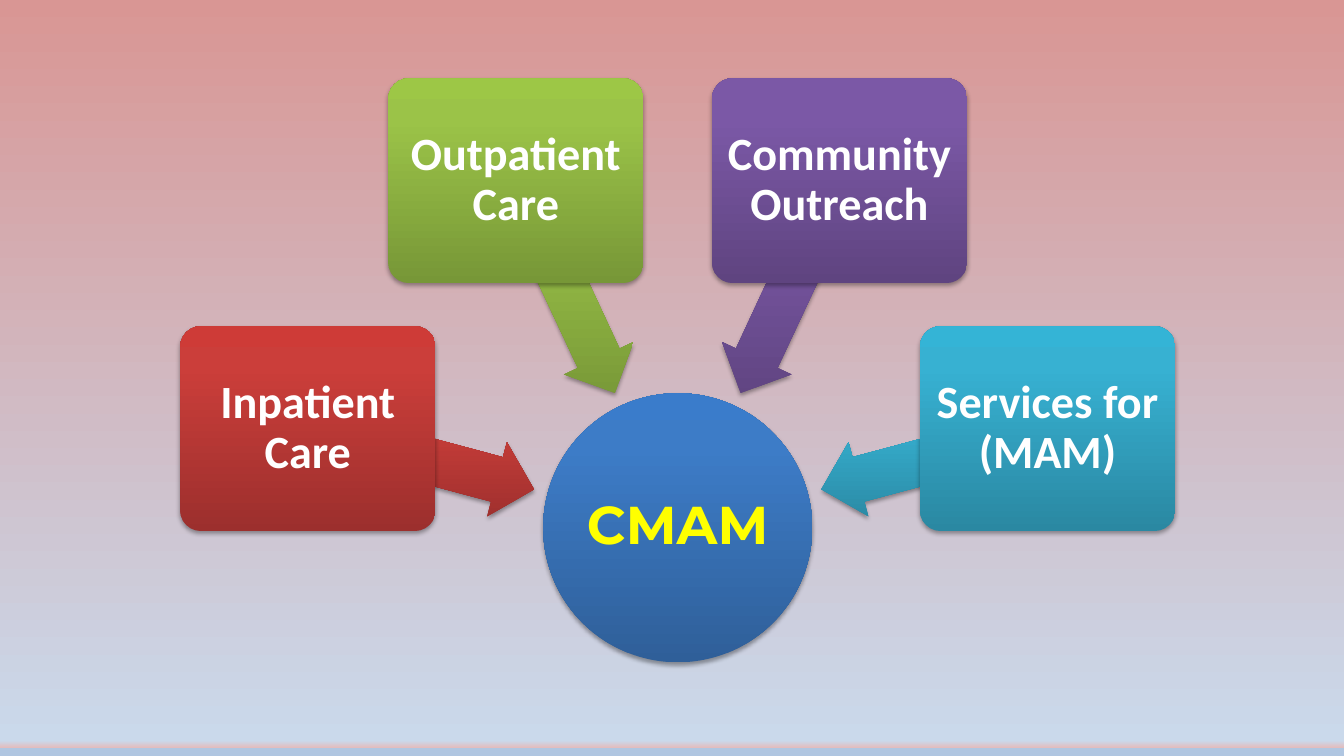
import math
from dataclasses import dataclass

from lxml import etree
from pptx import Presentation
from pptx import util as u
from pptx.dml.color import RGBColor
from pptx.enum import shapes, text
from pptx.oxml import ns
from pptx.shapes.autoshape import Shape
from pptx.slide import Slide

HUB_X, HUB_Y, HUB_SIZE = 17.08, 13.3, 6.78
CARD_W, CARD_H, CARD_DISTANCE = 6.43, 5.16, 9.65
ARROW_W, ARROW_H, ARROW_DISTANCE = 5.92, 1.93, 6.71
FIRST_ANGLE, ANGLE_STEP = 195, 50


@dataclass(frozen=True)
class Component:
    label: str
    dark: str
    middle: str
    light: str

    @property
    def stops(self) -> list[tuple[int, str]]:
        return [(0, self.dark), (80, self.middle), (100, self.light)]


HUB = Component("CMAM", "2F5F99", "3D7CC7", "3A7CCB")
COMPONENTS = [
    Component("Inpatient Care", "9C2F2D", "CB3E3A", "CE3B37"),
    Component("Outpatient Care", "779737", "9BC348", "9DC746"),
    Component("Community Outreach", "5F4480", "7B58A6", "7C57A8"),
    Component("Services for (MAM)", "2A88A2", "37B1D2", "34B4D6"),
]
BACKGROUND = [(0, "D99694"), (98, "CAD9EB"), (99, "E6B9B8"), (99, "B0C6E1")]


def color(value: str) -> RGBColor:
    return RGBColor.from_string(value)


def add_node(parent: etree._Element, tag: str, **attributes: object) -> etree._Element:
    values = {name: str(value) for name, value in attributes.items()}
    return etree.SubElement(parent, ns.qn(tag), values)


def set_gradient(owner: etree._Element, stops: list[tuple[int, str]], angle: int) -> None:
    """Replace the stops of the gradient fill inside owner; angle is clockwise."""
    gradient = next(owner.iter(ns.qn("a:gradFill")))
    for child in list(gradient):
        gradient.remove(child)
    gradient.set("rotWithShape", "0")
    stop_list = add_node(gradient, "a:gsLst")
    for position, value in stops:
        stop = add_node(stop_list, "a:gs", pos=position * 1000)
        add_node(stop, "a:srgbClr", val=value)
    add_node(gradient, "a:lin", ang=angle * 60000, scaled=0)


def set_shadow(shape: Shape) -> None:
    shape.shadow.inherit = False
    effects = shape._element.spPr.find(ns.qn("a:effectLst"))
    shadow = add_node(effects, "a:outerShdw", blurRad=u.Pt(3.1), dist=u.Pt(1.8),
                      dir=90 * 60000, rotWithShape=0)
    add_node(add_node(shadow, "a:srgbClr", val="000000"), "a:alpha", val=35000)


def add_centered(slide: Slide, preset: shapes.MSO_SHAPE, x: float, y: float,
                 width: float, height: float, component: Component) -> Shape:
    """Add a shaded shape whose middle lies at x, y."""
    shape = slide.shapes.add_shape(preset, u.Cm(x - width / 2), u.Cm(y - height / 2),
                                   u.Cm(width), u.Cm(height))
    shape.line.fill.background()
    shape.fill.gradient()
    set_gradient(shape._element.spPr, component.stops, 270)
    set_shadow(shape)
    return shape


def set_label(shape: Shape, label: str, font: str, size: int, value: str, inset: float) -> None:
    frame = shape.text_frame
    frame.word_wrap = True
    frame.vertical_anchor = text.MSO_ANCHOR.MIDDLE
    frame.margin_left = frame.margin_right = u.Cm(inset)
    frame.margin_top = frame.margin_bottom = u.Cm(inset)
    paragraph = frame.paragraphs[0]
    paragraph.alignment = text.PP_ALIGN.CENTER
    paragraph.line_spacing = 0.9
    run = paragraph.add_run()
    run.text = label
    run.font.name = font
    run.font.size = u.Pt(size)
    run.font.bold = True
    run.font.color.rgb = color(value)


def around_hub(angle: float, distance: float) -> tuple[float, float]:
    turn = math.radians(angle)
    return HUB_X + distance * math.cos(turn), HUB_Y + distance * math.sin(turn)


def add_component(slide: Slide, component: Component, angle: int) -> None:
    """Add a card and its arrow towards the hub, on a ray at the given angle."""
    arrow = add_centered(slide, shapes.MSO_SHAPE.LEFT_ARROW,
                         *around_hub(angle, ARROW_DISTANCE), ARROW_W, ARROW_H, component)
    arrow.adjustments[0] = 0.6
    arrow.adjustments[1] = 0.5
    arrow.rotation = angle
    card = add_centered(slide, shapes.MSO_SHAPE.ROUNDED_RECTANGLE,
                        *around_hub(angle, CARD_DISTANCE), CARD_W, CARD_H, component)
    card.adjustments[0] = 0.1
    set_label(card, component.label, "Calibri", 33, "FFFFFF", 0.17)


def main() -> None:
    deck = Presentation()
    deck.slide_width, deck.slide_height = u.Cm(33.87), u.Cm(19.05)
    slide = deck.slides.add_slide(deck.slide_layouts[6])
    slide.background.fill.gradient()
    set_gradient(slide._element, BACKGROUND, 90)

    hub = add_centered(slide, shapes.MSO_SHAPE.OVAL, HUB_X, HUB_Y, HUB_SIZE, HUB_SIZE, HUB)
    set_label(hub, HUB.label, "Montserrat", 38, "FFFF00", 0.08)
    for index, component in enumerate(COMPONENTS):
        add_component(slide, component, FIRST_ANGLE + index * ANGLE_STEP)
    deck.save("out.pptx")


if __name__ == "__main__":
    main()
